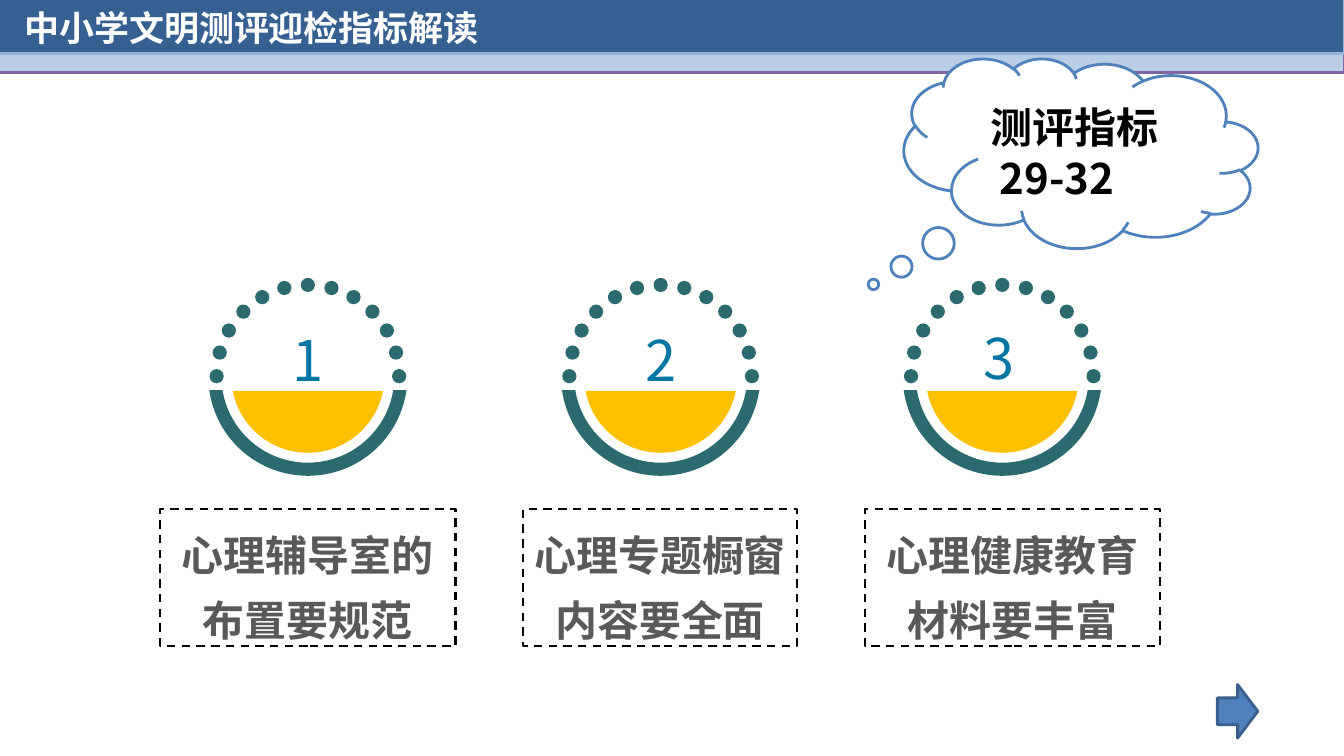
import math

import lxml.etree
import pptx
import pptx.dml.color
import pptx.enum.dml
import pptx.enum.shapes
import pptx.enum.text
import pptx.oxml
import pptx.oxml.ns
import pptx.util

Cm = pptx.util.Cm
RGBColor = pptx.dml.color.RGBColor
FORM = pptx.enum.shapes.MSO_SHAPE
ALIGN = pptx.enum.text.PP_ALIGN
ANCHOR = pptx.enum.text.MSO_ANCHOR
FIT = pptx.enum.text.MSO_AUTO_SIZE
qn = pptx.oxml.ns.qn

FONT = "Noto Sans CJK SC"
WHITE = RGBColor(0xFF, 0xFF, 0xFF)
BLACK = RGBColor(0x00, 0x00, 0x00)
GREY = RGBColor(0x59, 0x59, 0x59)
NAVY = RGBColor(0x37, 0x60, 0x92)
PALE = RGBColor(0xB9, 0xCD, 0xE5)
SKY = RGBColor(0x95, 0xB3, 0xD7)
PURPLE = RGBColor(0x80, 0x64, 0xA2)
BLUE = RGBColor(0x4F, 0x81, 0xBD)
EDGE = RGBColor(0x3A, 0x5F, 0x8C)
TEAL = RGBColor(0x2B, 0x6B, 0x6F)
GOLD = RGBColor(0xFF, 0xC0, 0x00)
CYAN = RGBColor(0x00, 0x76, 0xA3)

UNITS = 1000  # freeform units per centimetre
RING_Y = 9.48
RIM, INNER, BOWL, ORBIT, DOT = 2.51, 2.18, 1.93, 2.3, 0.18  # radii
# ring centre, digit box left and top, caption left and width, caption
TOPICS = [
    (7.76, 6.02, 7.42, 4.04, 7.44, "心理辅导室的布置要规范"),
    (16.65, 14.91, 7.42, 13.18, 6.91, "心理专题橱窗内容要全面"),
    (25.26, 23.44, 7.37, 21.79, 7.44, "心理健康教育材料要丰富"),
]


def apply(target, values):
    for name, value in values.items():
        setattr(target, name, value)


def paint(shape, fill, line, width=2):
    """Set fill and outline, either of which may be None, and drop the shadow."""
    shape.shadow.inherit = False
    for part, color in ((shape.fill, fill), (shape.line.fill, line)):
        if color is None:
            part.background()
        else:
            part.solid()
            part.fore_color.rgb = color
    if line is not None:
        shape.line.width = pptx.util.Pt(width)


def draw(slide, form, box, fill, line, width=2):
    shape = slide.shapes.add_shape(form, *map(Cm, box))
    paint(shape, fill, line, width)
    return shape


def write(frame, lines, size, color, bold=False, para={}, body={}):
    """Fill a text frame, one paragraph per line."""
    apply(frame, {"word_wrap": True, "auto_size": FIT.NONE, **body})
    for i, line in enumerate(lines):
        item = frame.add_paragraph() if i else frame.paragraphs[0]
        apply(item, para)
        run = item.add_run()
        run.text = line
        apply(run.font, {"size": pptx.util.Pt(size), "bold": bold, "name": FONT})
        run.font.color.rgb = color
        east = pptx.oxml.parse_xml(
            f'<a:ea {pptx.oxml.ns.nsdecls("a")} typeface="{FONT}"/>')
        run.font._element.find(qn("a:latin")).addnext(east)


def trace(slide, box, middle, steps, fill):
    """Freeform of true arcs; steps are (tag, radius, angle, sweep), (x, y)."""
    left, top, right, low = (round(v * UNITS) for v in box)
    pen = slide.shapes.build_freeform(left, top, scale=Cm(1) / UNITS)
    pen.add_line_segments([(right, top), (right, low)])
    shape = pen.convert_to_shape()
    paint(shape, fill, None)
    route = next(shape.element.iter(qn("a:path")))
    for child in list(route):
        route.remove(child)
    for tag, radius, angle, sweep, x, y in steps:
        node = lxml.etree.SubElement(route, qn(f"a:{tag}"))
        if tag == "arcTo":
            size = round(radius * UNITS)
            values = {"wR": size, "hR": size, "stAng": round(angle * 60000),
                      "swAng": round(sweep * 60000)}
            for name, value in values.items():
                node.set(name, str(value))
        elif tag != "close":
            turn = math.radians(angle)
            spot = lxml.etree.SubElement(node, qn("a:pt"))
            across = middle[0] + x + radius * math.cos(turn)
            down = middle[1] + y + radius * math.sin(turn)
            spot.set("x", str(round(across * UNITS) - left))
            spot.set("y", str(round(down * UNITS) - top))


def curve(radius, angle, sweep, x=0, y=0, tag="moveTo"):
    return [(tag, radius, angle, 0, x, y), ("arcTo", radius, angle, sweep, x, y)]


def badge(slide, number, x, left, top):
    """Dotted upper half, solid lower rim, gold bowl and digit."""
    end = [("close", 0, 0, 0, 0, 0)]
    outer, inner = (math.degrees(math.asin(0.35 / r)) for r in (RIM, INNER))
    steps = curve(RIM, outer, 180 - 2 * outer)
    steps += curve(INNER, 180 - inner, 2 * inner - 180, tag="lnTo") + end
    for angle in range(180, 361, 15):
        turn = math.radians(angle)
        dot = curve(DOT, 0, 180, ORBIT * math.cos(turn), ORBIT * math.sin(turn))
        steps += dot + [("arcTo", DOT, 180, 180, 0, 0)] + end
    middle = (x, RING_Y)
    trace(slide, (x - RIM, RING_Y - ORBIT - DOT, x + RIM, RING_Y + RIM),
          middle, steps, TEAL)
    cut = math.degrees(math.asin(0.37 / BOWL))
    half = math.sqrt(BOWL ** 2 - 0.37 ** 2)
    trace(slide, (x - half, RING_Y + 0.37, x + half, RING_Y + BOWL),
          middle, curve(BOWL, cut, 180 - 2 * cut) + end, GOLD)
    digit = slide.shapes.add_textbox(*map(Cm, (left, top, 3.48, 2.41)))
    sides = ("margin_left", "margin_right", "margin_top", "margin_bottom")
    write(digit.text_frame, [str(number)], 40, CYAN,
          para={"alignment": ALIGN.CENTER, "line_spacing": 1.5},
          body={"vertical_anchor": ANCHOR.MIDDLE, **dict.fromkeys(sides, 0)})


def label(slide, left, width, text):
    box = draw(slide, FORM.RECTANGLE, (left, 12.83, width, 3.45), None, BLACK, 1.5)
    box.line.dash_style = pptx.enum.dml.MSO_LINE.DASH
    write(box.text_frame, [text], 30, GREY, True,
          para={"alignment": ALIGN.CENTER, "line_spacing": 1.3},
          body={"vertical_anchor": ANCHOR.TOP})


def header(slide, text):
    draw(slide, FORM.RECTANGLE, (-0.08, 0.08, 33.96, 1.75), PALE, PURPLE)
    draw(slide, FORM.RECTANGLE, (-0.08, -0.05, 33.96, 1.4), NAVY, SKY)
    title = slide.shapes.title
    spot = dict(zip(("left", "top", "width", "height"),
                    map(Cm, (0.36, 0.03, 12.01, 1.32))))
    apply(title, spot)
    write(title.text_frame, [text], 25, WHITE, True,
          para={"alignment": ALIGN.LEFT},
          body={"word_wrap": False, "vertical_anchor": ANCHOR.TOP})
    slide.shapes.element.append(title.element)  # bring above the bands


def cloud(slide, lines, insets):
    shape = draw(slide, FORM.CLOUD_CALLOUT, (22.78, 1.47, 8.92, 4.78), WHITE, BLUE)
    shape.adjustments[0], shape.adjustments[1] = 0.586, 0.692
    shape.element.spPr.find(qn("a:xfrm")).set("flipH", "1")
    box = slide.shapes.add_textbox(*map(Cm, (23.29, 2.44, 7.92, 2.82)))
    write(box.text_frame, lines, 30, BLACK, True)
    for item, inset in zip(box.text_frame.paragraphs, insets):
        item._p.get_or_add_pPr().set("marL", str(Cm(inset)))


def main():
    deck = pptx.Presentation()
    apply(deck, {"slide_width": Cm(33.87), "slide_height": Cm(19.05)})
    slide = deck.slides.add_slide(deck.slide_layouts[5])
    header(slide, "中小学文明测评迎检指标解读")
    for number, (x, left, top, side, width, text) in enumerate(TOPICS, 1):
        badge(slide, number, x, left, top)
        label(slide, side, width, text)
    cloud(slide, ["测评指标", "29-32"], (1.42, 1.66))
    draw(slide, FORM.RIGHT_ARROW, (30.68, 17.25, 1.02, 1.35), BLUE, EDGE)
    deck.save("out.pptx")


if __name__ == "__main__":
    main()
